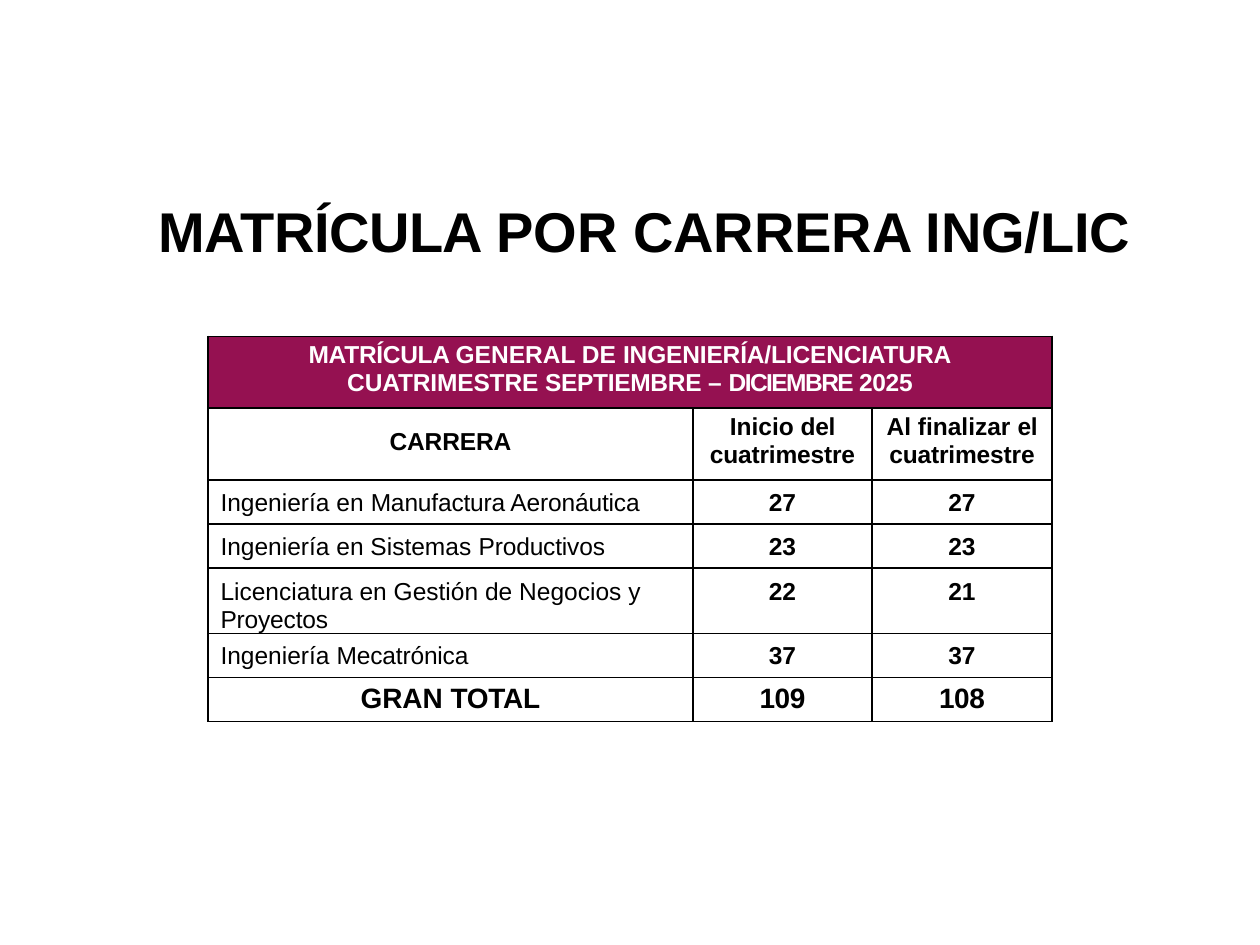
from dataclasses import dataclass
from lxml import etree
from pptx import Presentation, util as u
from pptx.dml.color import RGBColor
from pptx.enum import text as t
from pptx.oxml import ns

WIDE, HIGH = 10, 7.5
COLS = (3.85, 1.42, 1.43)
BLACK, WHITE, WINE = "000000", "FFFFFF", "951151"
LEFT, MID = t.PP_ALIGN.LEFT, t.PP_ALIGN.CENTER

Run = tuple[str, float]  # words and letter spacing in points
Line = list[Run]


@dataclass
class Style:
    size: int = 14
    bold: bool = True
    tint: str = BLACK
    align: t.PP_ALIGN = MID


@dataclass
class Cell:
    lines: list[Line]
    top: float
    style: Style
    left: float = 0
    fill: str | None = None


@dataclass
class Row:
    high: float
    cells: list[Cell]


def color(tint: str) -> RGBColor:
    return RGBColor.from_string(tint)


def write(frame, lines: list[Line], style: Style) -> None:
    for i, line in enumerate(lines):
        para = frame.add_paragraph() if i else frame.paragraphs[0]
        para.alignment = style.align
        for words, gap in line:
            run = para.add_run()
            run.text = words
            form = {"name": "Arial", "size": u.Pt(style.size), "bold": style.bold}
            for key, val in form.items():
                setattr(run.font, key, val)
            run.font.color.rgb = color(style.tint)
            if gap:
                run.font._element.set("spc", str(round(gap * 100)))


def inset(box, left: float, top: float) -> None:
    sides = {"left": left, "top": top, "right": 0, "bottom": 0}
    for side, val in sides.items():
        setattr(box, f"margin_{side}", u.Inches(val))


def border(cell) -> None:
    props = cell._tc.get_or_add_tcPr()
    for side in ("lnL", "lnR", "lnT", "lnB"):
        line = etree.SubElement(props, ns.qn(f"a:{side}"), w=str(u.Pt(1)))
        fill = etree.SubElement(line, ns.qn("a:solidFill"))
        etree.SubElement(fill, ns.qn("a:srgbClr"), val=BLACK)


def paint(cell, fill: str | None) -> None:
    if fill:
        cell.fill.solid()
        cell.fill.fore_color.rgb = color(fill)
    else:
        cell.fill.background()


def career(head: str, tail: str, start: str, end: str,
           high: float = 0.35, top: float = 0.07) -> Row:
    name = Cell([[(head, 0), (tail, -0.1)]], top, Style(bold=False, align=LEFT), 0.1)
    counts = [Cell([[(num, -0.2)]], top, Style()) for num in (start, end)]
    return Row(high, [name, *counts])


def grid(slide, rows: list[Row], left: float, top: float) -> None:
    frame = slide.shapes.add_table(
        len(rows), len(COLS), u.Inches(left), u.Inches(top),
        u.Inches(sum(COLS)), u.Inches(sum(row.high for row in rows)))
    table = frame.table
    table.first_row = table.horz_banding = False
    for col, wide in zip(table.columns, COLS):
        col.width = u.Inches(wide)
    for cell in table.iter_cells():
        border(cell)
        paint(cell, None)
    for r, row in enumerate(rows):
        table.rows[r].height = u.Inches(row.high)
        for c, item in enumerate(row.cells):
            cell = table.cell(r, c)
            inset(cell, item.left, item.top)
            paint(cell, item.fill)
            write(cell.text_frame, item.lines, item.style)
    table.cell(0, 0).merge(table.cell(0, len(COLS) - 1))


def title(slide) -> None:
    box = slide.shapes.add_textbox(
        u.Inches(-0.42), u.Inches(0.92), u.Inches(0.95 * WIDE), u.Inches(1.29))
    frame = box.text_frame
    frame.word_wrap = True
    inset(frame, 1.68, 0.75)
    line = [("MATRÍCULA ", -0.3), ("POR ", 0), ("CARRERA ING/LIC", -0.1)]
    write(frame, [line], Style(size=32, align=LEFT))


BANNER = [
    [("MATRÍCULA ", -0.2), ("GENERAL DE ", 0), ("INGENIERÍA/LICENCIATURA", -0.1)],
    [("CUATRIMESTRE ", -0.1), ("SEPTIEMBRE ", -0.2), ("– ", 0),
     ("DICIEMBRE ", -0.9), ("2025", -0.2)],
]
START = [("Inicio ", 0), ("del ", -0.2), ("cuatrimestre", -0.1)]
END = [("Al finalizar ", 0), ("el ", -0.2), ("cuatrimestre", -0.1)]
TOTAL = [[("GRAN ", 0), ("TOTAL", -0.1)], [("109", -0.2)], [("108", -0.2)]]

ROWS = [
    Row(0.57, [Cell(BANNER, 0.04, Style(tint=WHITE), fill=WINE)]),
    Row(0.57, [Cell([[("CARRERA", -0.1)]], 0.16, Style()),
               Cell([START], 0.04, Style()),
               Cell([END], 0.04, Style())]),
    career("Ingeniería en ", "Manufactura Aeronáutica", "27", "27"),
    career("Ingeniería en Sistemas ", "Productivos", "23", "23"),
    career("Licenciatura en Gestión de Negocios y ", "Proyectos", "22", "21",
           high=0.38, top=0.08),
    career("Ingeniería ", "Mecatrónica", "37", "37"),
    Row(0.35, [Cell([line], 0.05, Style(size=16)) for line in TOTAL]),
]


def main() -> None:
    deck = Presentation()
    deck.slide_width, deck.slide_height = u.Inches(WIDE), u.Inches(HIGH)
    slide = deck.slides.add_slide(deck.slide_layouts[6])
    grid(slide, ROWS, (WIDE - sum(COLS)) / 2, 2.67)
    title(slide)
    deck.save("out.pptx")


if __name__ == "__main__":
    main()
